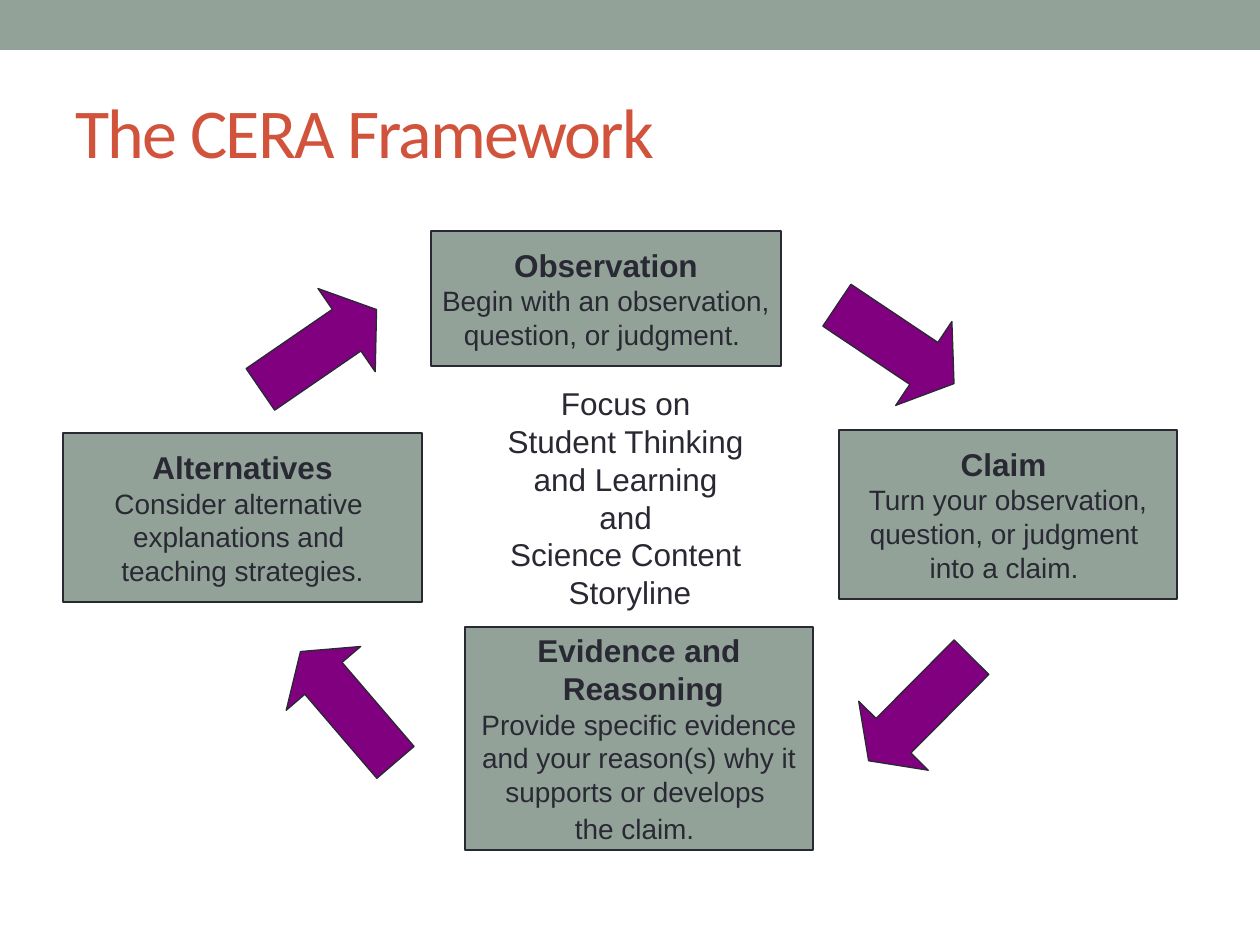
from pptx import Presentation
from pptx.dml.color import RGBColor
from pptx.enum.shapes import MSO_SHAPE as SHAPE
from pptx.enum.text import MSO_ANCHOR as ANCHOR, MSO_AUTO_SIZE as AUTO, PP_ALIGN as ALIGN
from pptx.util import Emu, Pt

SAGE = RGBColor(0x93, 0xA2, 0x99)
INK = RGBColor(0x29, 0x29, 0x34)
RUST = RGBColor(0xD2, 0x53, 0x3C)
PURPLE = RGBColor(0x80, 0x00, 0x80)
HEAD_PT, BODY_PT = 18, 16

TITLE = "The CERA Framework"

# Steps: (left, top, width, height) in px, heading lines, body lines
STEPS = [
    ((431, 231, 350, 135), ["Observation"],
     ["Begin with an observation,", "question, or judgment. "]),
    ((63, 433, 359, 169), ["Alternatives"],
     ["Consider alternative ", "explanations and ", "teaching strategies."]),
    ((839, 430, 338, 169), ["Claim "],
     ["Turn your observation,", "question, or judgment ", "into a claim. "]),
    ((465, 627, 348, 223), ["Evidence and", " Reasoning"],
     ["Provide specific evidence", " and your reason(s) why it ",
      "supports or develops ", "the claim."]),
]

# A vertical tab is a line break inside a paragraph
FOCUS_BOX = (494, 378, 272, 242)
FOCUS = ["Focus on ", "Student Thinking ", "and Learning \vand ",
         "Science Content ", "Storyline"]

# Arrows: (left, top, width, height) in px, rotation in degrees
ARROWS = [
    ((825, 294, 141, 101), 33.8),
    ((275, 658, 146, 98), 229.4),
    ((847, 660, 146, 98), 134.8),
    ((248, 299, 141, 101), 325.5),
]


def px(*values):
    return [Emu(round(v * 914400 / 126)) for v in values]


def add_shape(kind, box, fill, outlined=True):
    s = slide.shapes.add_shape(kind, *px(*box))
    s.shadow.inherit = False
    s.fill.solid()
    s.fill.fore_color.rgb = fill
    if outlined:
        s.line.color.rgb = INK
        s.line.width = Pt(0.75)
    else:
        s.line.fill.background()
    return s


def style(r, size, color=INK, bold=False, name="Arial"):
    r.font.size, r.font.bold, r.font.name = Pt(size), bold, name
    r.font.color.rgb = color


def write(tf, headings, body, body_size):
    tf.word_wrap = False
    tf.text = "\n".join(headings + body)
    for i, p in enumerate(tf.paragraphs):
        p.alignment = ALIGN.CENTER
        is_heading = i < len(headings)
        for r in p.runs:
            style(r, HEAD_PT if is_heading else body_size, bold=is_heading)


prs = Presentation()
prs.slide_width, prs.slide_height = px(1260, 945)
slide = prs.slides.add_slide(prs.slide_layouts[5])

# Top band
add_shape(SHAPE.RECTANGLE, (0, 0, 1260, 50), SAGE, outlined=False)

# Title
title = slide.shapes.title
title.left, title.top, title.width, title.height = px(63, 63, 1134, 136)
tf = title.text_frame
tf.text = TITLE
tf.vertical_anchor = ANCHOR.MIDDLE
p = tf.paragraphs[0]
p.alignment = ALIGN.LEFT
style(p.runs[0], 40, RUST, name="Calibri")
p.runs[0].font._element.set("spc", "-100")

# Step boxes
for box, headings, body in STEPS:
    tf = add_shape(SHAPE.RECTANGLE, box, SAGE).text_frame
    tf.vertical_anchor = ANCHOR.MIDDLE
    write(tf, headings, body, BODY_PT)

# The last step closes with a space at heading size
r = tf.paragraphs[-1].add_run()
r.text = " "
style(r, HEAD_PT)

# Central focus
tf = slide.shapes.add_textbox(*px(*FOCUS_BOX)).text_frame
write(tf, [], FOCUS, HEAD_PT)
tf.auto_size = AUTO.SHAPE_TO_FIT_TEXT

# Cycle arrows
for box, angle in ARROWS:
    s = add_shape(SHAPE.RIGHT_ARROW, box, PURPLE)
    s.adjustments[0], s.adjustments[1] = 0.5, 0.36
    s.rotation = angle

prs.save("out.pptx")
